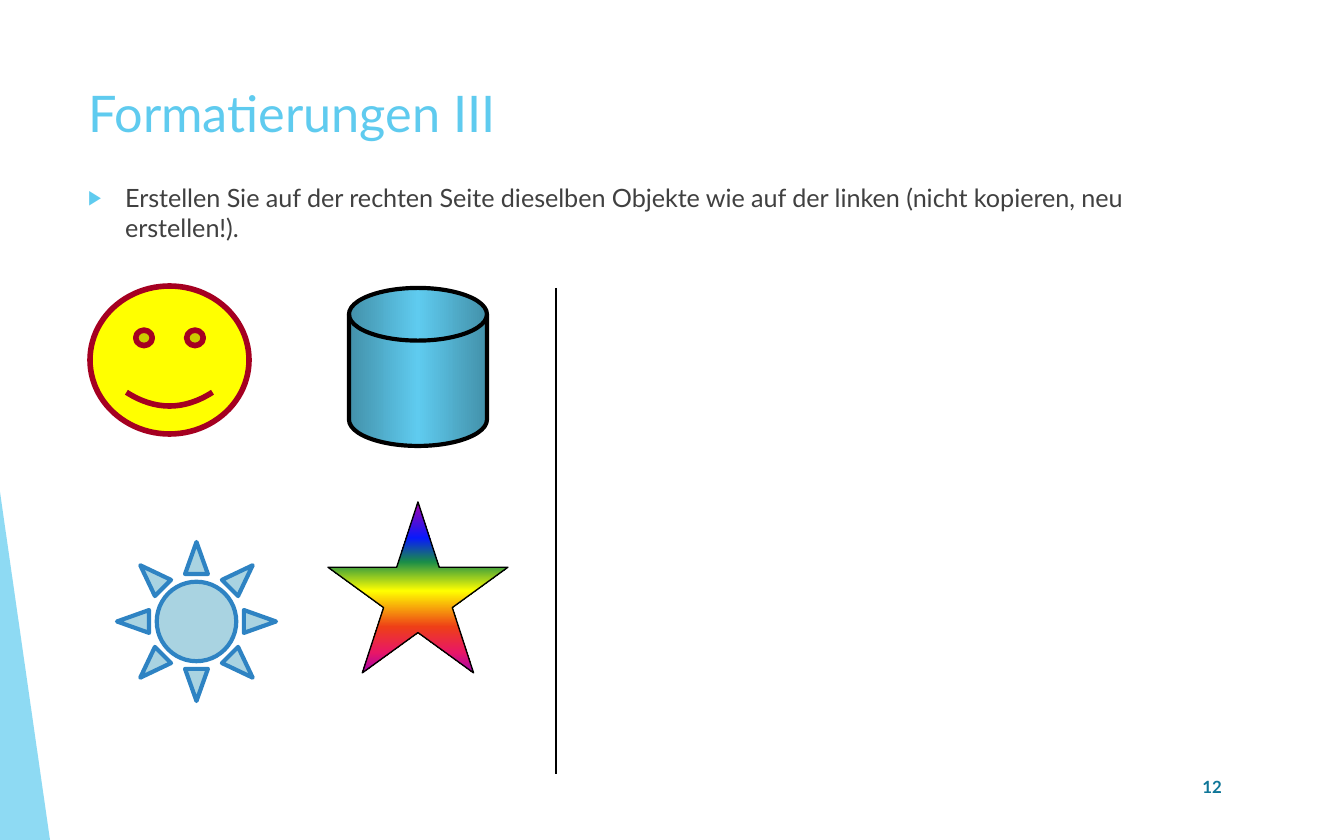
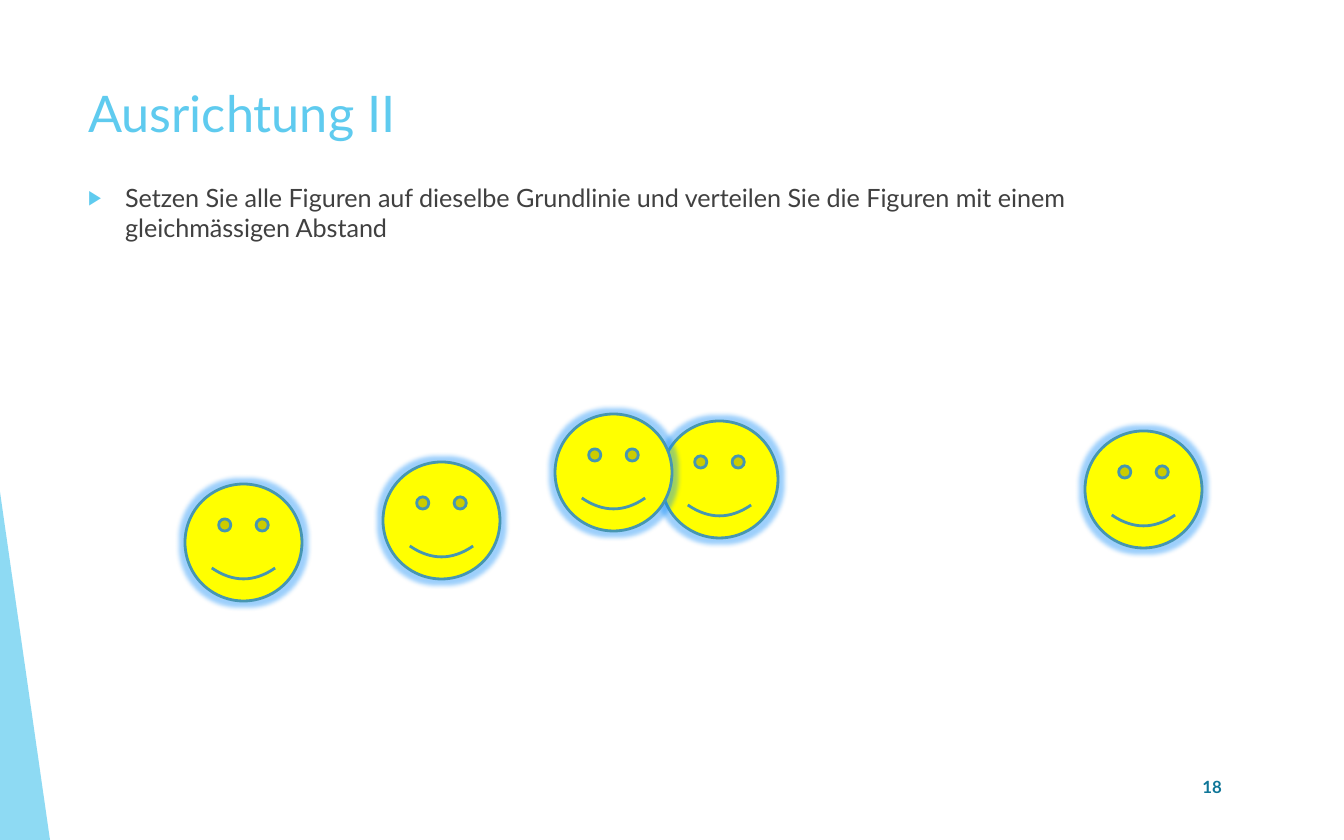
from lxml import etree
from pptx import Presentation
from pptx.dml.color import RGBColor
from pptx.enum.shapes import MSO_CONNECTOR, MSO_SHAPE
from pptx.enum.text import MSO_ANCHOR, PP_ALIGN
from pptx.oxml.ns import qn
from pptx.util import Emu, Pt

STRAIGHT = MSO_CONNECTOR.STRAIGHT
TRIANGLE = MSO_SHAPE.ISOSCELES_TRIANGLE
SMILEY = MSO_SHAPE.SMILEY_FACE
CYLINDER = MSO_SHAPE.FLOWCHART_MAGNETIC_DISK
SUN = MSO_SHAPE.SUN
STAR = MSO_SHAPE.STAR_5_POINT
TOP, MIDDLE = MSO_ANCHOR.TOP, MSO_ANCHOR.MIDDLE
LEFT, RIGHT = PP_ALIGN.LEFT, PP_ALIGN.RIGHT

WIDTH, HEIGHT = 1344, 840
EMU_PER_PX = 9144000 / WIDTH
FONT = "Lato"
ACCENT, BODY, NUMBER = "5FCBEF", "404040", "0F7698"
BLACK, YELLOW = "000000", "FFFF00"
GLOW = "0A89F8"
DARK_SHADE = 46275
METAL = [(0, ACCENT, DARK_SHADE), (50, ACCENT, None), (100, ACCENT, DARK_SHADE)]
RAINBOW = [
    (0, "A603AB", None), (21, "0819FB", None), (35, "1A8D48", None),
    (52, YELLOW, None), (73, "EE3F17", None), (88, "E81766", None),
    (100, "A603AB", None),
]
FACE_SIZE = 117
FACES = [(185, 484), (1085, 431), (661, 421), (383, 462), (555, 414)]


def px(length):
    """Turn pixels into EMU."""
    return Emu(round(length * EMU_PER_PX))


def color(value):
    """Turn a hex string into a colour."""
    return RGBColor.from_string(value)


def add_xml(parent, tag, **attributes):
    """Append a child element with the given attributes."""
    child = etree.SubElement(parent, qn(tag))
    for name, value in attributes.items():
        child.set(name, str(value))
    return child


class Deck:
    """Hold the shared style and the current slide."""

    def __init__(self):
        """Start an empty presentation of the right size."""
        self.presentation = Presentation()
        self.presentation.slide_width = px(WIDTH)
        self.presentation.slide_height = px(HEIGHT)
        self.slide = None

    def start_slide(self, title, task, number):
        """Add a slide with its band, title, task and number."""
        layout = self.presentation.slide_layouts[6]
        self.slide = self.presentation.slides.add_slide(layout)
        band = self.shape(TRIANGLE, (0, 492, 50, 348), ACCENT, adjustment=0)
        fill_color = band.element.spPr.find(qn("a:solidFill"))[0]
        add_xml(fill_color, "a:alpha", val=70000)
        self.text((75, 75, 1159, 81), title, 27, ACCENT)
        self.bullet(self.text((75, 176, 1159, 563), task, 13.5, BODY))
        self.text((1160, 765, 75, 44), number, 9, NUMBER, RIGHT, MIDDLE, True)

    def text(self, box, content, size, hue, align=LEFT, anchor=TOP, bold=False):
        """Add a wrapped text box and return its paragraph."""
        frame = self.slide.shapes.add_textbox(*map(px, box)).text_frame
        frame.word_wrap = True
        frame.vertical_anchor = anchor
        paragraph = frame.paragraphs[0]
        paragraph.alignment = align
        run = paragraph.add_run()
        run.text = content
        run.font.name = FONT
        run.font.size = Pt(size)
        run.font.bold = bold
        run.font.color.rgb = color(hue)
        return paragraph

    def bullet(self, paragraph):
        """Give a paragraph a hanging arrow bullet."""
        paragraph.space_before = Pt(7.5)
        properties = paragraph.runs[0].font and paragraph._p.get_or_add_pPr()
        properties.set("marL", str(px(37)))
        properties.set("indent", str(-px(37)))
        add_xml(add_xml(properties, "a:buClr"), "a:srgbClr", val=ACCENT)
        add_xml(properties, "a:buSzPct", val=80000)
        add_xml(properties, "a:buFont", typeface="Arial")
        add_xml(properties, "a:buChar", char="▶")

    def shape(self, kind, box, fill, line=None, weight=0, adjustment=None):
        """Add a preset shape with a plain fill and an optional line."""
        shape = self.slide.shapes.add_shape(kind, *map(px, box))
        shape.shadow.inherit = False
        if adjustment is not None:
            shape.adjustments[0] = adjustment
        shape.fill.solid()
        shape.fill.fore_color.rgb = color(fill)
        if line:
            shape.line.color.rgb = color(line)
            shape.line.width = Pt(weight)
        else:
            shape.line.fill.background()
        return shape

    def gradient(self, shape, stops, angle):
        """Fill a shape with colour stops along a counter-clockwise angle."""
        shape.fill.gradient()
        shape.fill.gradient_angle = angle
        stop_list = shape.element.spPr.find(qn("a:gradFill")).find(qn("a:gsLst"))
        for stop in list(stop_list):
            stop_list.remove(stop)
        for percent, hue, shade in stops:
            stop = add_xml(stop_list, "a:gs", pos=percent * 1000)
            stop_color = add_xml(stop, "a:srgbClr", val=hue)
            if shade:
                add_xml(stop_color, "a:shade", val=shade)

    def glow(self, shape, radius):
        """Surround a shape with a soft blue glow."""
        effects = shape.element.spPr.find(qn("a:effectLst"))
        halo = add_xml(effects, "a:glow", rad=px(radius))
        add_xml(add_xml(halo, "a:srgbClr", val=GLOW), "a:alpha", val=40000)

    def line(self, start, end):
        """Add a thin black line."""
        connector = self.slide.shapes.add_connector(
            STRAIGHT, *map(px, start + end))
        connector.line.color.rgb = color(BLACK)
        connector.line.width = Pt(0.75)
        add_xml(connector.element.spPr, "a:effectLst")


def add_formatting_slide(deck):
    """Build the slide with four objects to recreate."""
    deck.start_slide(
        "Formatierungen III",
        "Erstellen Sie auf der rechten Seite dieselben Objekte wie auf der "
        "linken (nicht kopieren, neu erstellen!).",
        "12")
    deck.line((556, 288), (556, 774))
    deck.shape(SMILEY, (90, 286, 159, 148), YELLOW, "A50021", 3, 0.047)
    cylinder = deck.shape(CYLINDER, (349, 288, 138, 158), ACCENT, BLACK, 2.25)
    deck.gradient(cylinder, METAL, 0)
    deck.shape(SUN, (117, 542, 159, 159), "A9D3E1", "2E83C3", 2.25, 0.25)
    star = deck.shape(STAR, (328, 502, 180, 171), YELLOW, BLACK, 0.75)
    deck.gradient(star, RAINBOW, 270)


def add_alignment_slide(deck):
    """Build the slide with faces to align and distribute."""
    deck.start_slide(
        "Ausrichtung II",
        "Setzen Sie alle Figuren auf dieselbe Grundlinie und verteilen Sie "
        "die Figuren mit einem gleichmässigen Abstand",
        "18")
    for left, top in FACES:
        box = (left, top, FACE_SIZE, FACE_SIZE)
        face = deck.shape(SMILEY, box, YELLOW, "4696B1", 1.5)
        deck.glow(face, 9)


def main():
    """Build and save the presentation."""
    deck = Deck()
    add_formatting_slide(deck)
    add_alignment_slide(deck)
    deck.presentation.save("out.pptx")


if __name__ == "__main__":
    main()
